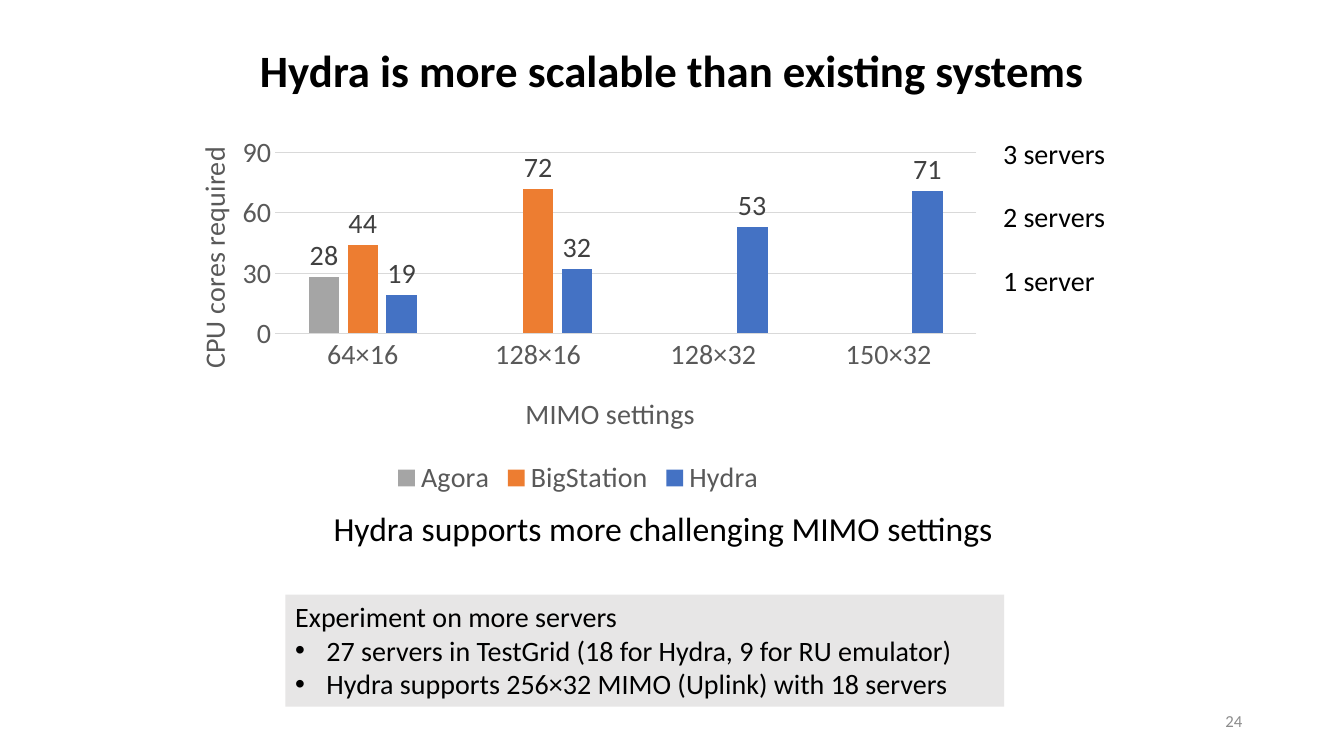
from lxml import etree
from pptx import Presentation
from pptx.chart.data import CategoryChartData
from pptx.dml.color import RGBColor
from pptx.enum.chart import XL_CHART_TYPE, XL_LABEL_POSITION, XL_LEGEND_POSITION, XL_TICK_MARK
from pptx.enum.shapes import MSO_SHAPE
from pptx.enum.text import MSO_ANCHOR, PP_ALIGN
from pptx.oxml.ns import qn
from pptx.util import Inches, Pt

COLUMNS = XL_CHART_TYPE.COLUMN_CLUSTERED
OUTSIDE_END = XL_LABEL_POSITION.OUTSIDE_END
BOTTOM = XL_LEGEND_POSITION.BOTTOM
NO_TICKS = XL_TICK_MARK.NONE
RECTANGLE = MSO_SHAPE.RECTANGLE
TOP, MIDDLE = MSO_ANCHOR.TOP, MSO_ANCHOR.MIDDLE
LEFT, CENTER, RIGHT = PP_ALIGN.LEFT, PP_ALIGN.CENTER, PP_ALIGN.RIGHT

TITLE = "Hydra is more scalable than existing systems"
TAKEAWAY = "Hydra supports more challenging MIMO settings"
PAGE_NUMBER = "24"
SERVER_LABELS = ["3 servers", "2 servers", "1 server"]
EXPERIMENT_HEADING = "Experiment on more servers"
EXPERIMENT_POINTS = [
    "27 servers in TestGrid (18 for Hydra, 9 for RU emulator)",
    "Hydra supports 256×32 MIMO (Uplink) with 18 servers",
]
CATEGORY_TITLE, VALUE_TITLE = "MIMO settings", "CPU cores required"
MIMO_SETTINGS = ["64×16", "128×16", "128×32", "150×32"]
CORES = {
    "Agora": [28, None, None, None],
    "BigStation": [44, 72, None, None],
    "Hydra": [19, 32, 53, 71],
}

THEME = {
    "font": "Calibri",
    "title": 32, "body": 24, "label": 20, "number": 12,
    "text": "000000", "muted": "8C8C8C", "panel": "E7E6E6",
    "axis": "595959", "data_label": "404040", "grid": "D9D9D9",
    "series": ["A5A5A5", "ED7D31", "4472C4"],
}


def color(name):
    return RGBColor.from_string(THEME[name])


def style_font(font, size, color_name, bold=False):
    font.name = THEME["font"]
    font.size = Pt(THEME[size])
    font.color.rgb = color(color_name)
    font.bold = bold


def add_text(slide, text, box, size, color_name="text", align=LEFT,
             anchor=TOP, bold=False, line_spacing=0.9):
    frame = slide.shapes.add_textbox(*map(Inches, box)).text_frame
    frame.word_wrap = True
    frame.vertical_anchor = anchor
    paragraph = frame.paragraphs[0]
    paragraph.text = text
    paragraph.alignment = align
    paragraph.line_spacing = line_spacing
    style_font(paragraph.font, size, color_name, bold)


def place(element, index, **fractions):
    """Pin a chart part at fractions of the chart's size."""
    for old_layout in element.findall(qn("c:layout")):
        element.remove(old_layout)
    layout = etree.Element(qn("c:layout"))
    element.insert(index, layout)
    manual = etree.SubElement(layout, qn("c:manualLayout"))
    if "w" in fractions:
        etree.SubElement(manual, qn("c:layoutTarget")).set("val", "inner")
    for side in ("x", "y"):
        etree.SubElement(manual, qn(f"c:{side}Mode")).set("val", "edge")
    for key, fraction in fractions.items():
        etree.SubElement(manual, qn(f"c:{key}")).set("val", str(fraction))


def style_axis(axis, title, x, y):
    axis.major_tick_mark = axis.minor_tick_mark = NO_TICKS
    style_font(axis.tick_labels.font, "label", "axis")
    axis_title = axis.axis_title
    paragraph = axis_title.text_frame.paragraphs[0]
    paragraph.text = title
    style_font(paragraph.font, "label", "axis")
    place(axis_title._element, 1, x=x, y=y)


def style_line(line):
    line.color.rgb = color("grid")
    line.width = Pt(0.75)


def add_cores_chart(slide, box):
    data = CategoryChartData()
    data.categories = MIMO_SETTINGS
    for name, values in CORES.items():
        data.add_series(name, values)
    chart = slide.shapes.add_chart(COLUMNS, *map(Inches, box), data).chart
    chart.has_title = False
    style_font(chart.font, "label", "text")
    chart.has_legend = True
    chart.legend.position = BOTTOM
    chart.legend.include_in_layout = False
    style_font(chart.legend.font, "label", "axis")

    style_axis(chart.category_axis, CATEGORY_TITLE, 0.43, 0.7)
    style_line(chart.category_axis.format.line)
    value_axis = chart.value_axis
    style_axis(value_axis, VALUE_TITLE, 0.03, 0.04)
    value_axis.format.line.fill.background()
    value_axis.minimum_scale, value_axis.maximum_scale = 0, 90
    value_axis.major_unit = 30
    style_line(value_axis.major_gridlines.format.line)

    plot = chart.plots[0]
    plot.vary_by_categories = False
    plot.gap_width, plot.overlap = 219, -27
    for series, fill_color in zip(plot.series, THEME["series"]):
        series.format.fill.solid()
        series.format.fill.fore_color.rgb = RGBColor.from_string(fill_color)
        labels = series.data_labels
        labels.show_value = True
        labels.position = OUTSIDE_END
        style_font(labels.font, "label", "data_label")
    plot_area = chart._chartSpace.find(".//" + qn("c:plotArea"))
    place(plot_area, 0, x=0.134, y=0.068, w=0.847, h=0.484)


def add_bullet(paragraph):
    properties = paragraph._p.get_or_add_pPr()
    properties.set("marL", str(Inches(0.31)))
    properties.set("indent", str(Inches(-0.31)))
    etree.SubElement(properties, qn("a:buFont")).set("typeface", "Arial")
    etree.SubElement(properties, qn("a:buChar")).set("char", "•")


def add_experiment_panel(slide, box):
    panel = slide.shapes.add_shape(RECTANGLE, *map(Inches, box))
    panel.shadow.inherit = False
    panel.fill.solid()
    panel.fill.fore_color.rgb = color("panel")
    panel.line.fill.background()
    frame = panel.text_frame
    frame.word_wrap = True
    frame.vertical_anchor = TOP
    frame.text = "\n".join([EXPERIMENT_HEADING, *EXPERIMENT_POINTS])
    for index, paragraph in enumerate(frame.paragraphs):
        paragraph.alignment = LEFT
        if index:
            add_bullet(paragraph)
        style_font(paragraph.font, "label", "text")


def main():
    presentation = Presentation()
    presentation.slide_width = Inches(13.33)
    presentation.slide_height = Inches(7.5)
    slide = presentation.slides.add_slide(presentation.slide_layouts[6])

    add_text(slide, TITLE, (0, 0, 13.33, 1.45), "title",
             align=CENTER, anchor=MIDDLE, bold=True)
    add_text(slide, TAKEAWAY, (3.21, 5.03, 7.05, 0.52), "body")
    add_text(slide, PAGE_NUMBER, (9.42, 6.95, 3, 0.4), "number", "muted",
             align=RIGHT, anchor=MIDDLE, line_spacing=1.0)
    add_cores_chart(slide, (1.63, 1.26, 8.21, 3.71))
    add_experiment_panel(slide, (2.83, 5.9, 7.13, 1.11))
    for row, label in enumerate(SERVER_LABELS):
        add_text(slide, label, (9.85, 1.34 + 0.63 * row, 1.26, 0.52), "label")

    presentation.save("out.pptx")


if __name__ == "__main__":
    main()
